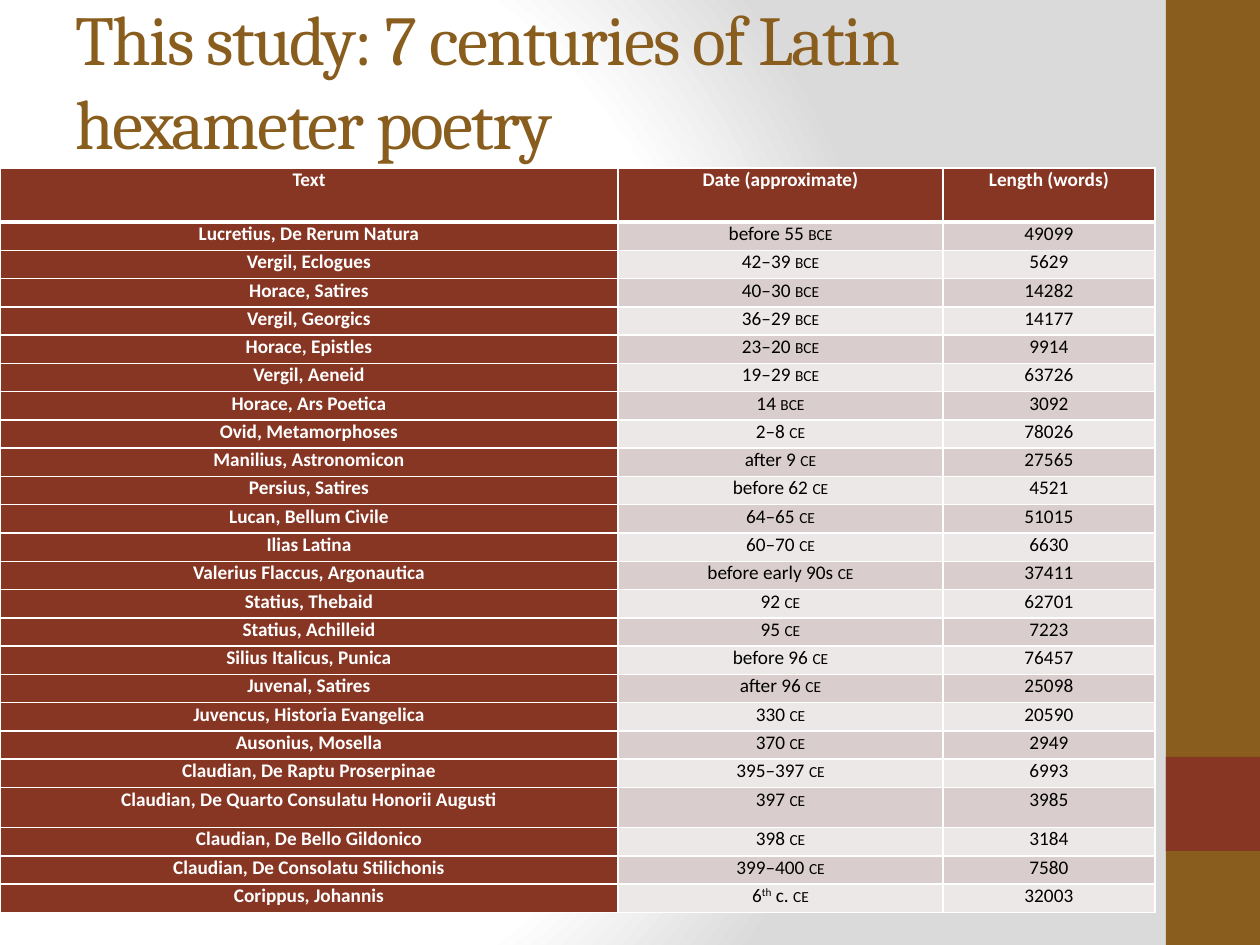
from dataclasses import dataclass

from lxml import etree
from pptx import Presentation
from pptx import util as u
from pptx.dml.color import RGBColor
from pptx.enum import shapes, text
from pptx.oxml import ns


@dataclass(frozen=True)
class Theme:
    """Colours, fonts and type sizes of the deck."""
    gold: str = "895D1D"
    rust: str = "873624"
    white: str = "FFFFFF"
    black: str = "000000"
    grey: str = "DADADA"
    bands: tuple = ("EDE8E8", "D9CECD")
    heading: str = "Cambria"
    body: str = "Calibri"
    title_pt: int = 40
    cell_pt: int = 11


T = Theme()
SCALE = 914400 / 126
HEADER = ("Text", "Date (approximate)", "Length (words)")
POEMS = [
    ("Lucretius, De Rerum Natura", "before 55 bce", "49099"),
    ("Vergil, Eclogues", "42–39 bce", "5629"),
    ("Horace, Satires", "40–30 bce", "14282"),
    ("Vergil, Georgics", "36–29 bce", "14177"),
    ("Horace, Epistles", "23–20 bce", "9914"),
    ("Vergil, Aeneid", "19–29 bce", "63726"),
    ("Horace, Ars Poetica", "14 bce", "3092"),
    ("Ovid, Metamorphoses", "2–8 ce", "78026"),
    ("Manilius, Astronomicon", "after 9 ce", "27565"),
    ("Persius, Satires", "before 62 ce", "4521"),
    ("Lucan, Bellum Civile", "64–65 ce", "51015"),
    ("Ilias Latina", "60–70 ce", "6630"),
    ("Valerius Flaccus, Argonautica", "before early 90s ce", "37411"),
    ("Statius, Thebaid", "92 ce", "62701"),
    ("Statius, Achilleid", "95 ce", "7223"),
    ("Silius Italicus, Punica", "before 96 ce", "76457"),
    ("Juvenal, Satires", "after 96 ce", "25098"),
    ("Juvencus, Historia Evangelica", "330 ce", "20590"),
    ("Ausonius, Mosella", "370 ce", "2949"),
    ("Claudian, De Raptu Proserpinae", "395–397 ce", "6993"),
    ("Claudian, De Quarto Consulatu Honorii Augusti", "397 ce", "3985"),
    ("Claudian, De Bello Gildonico", "398 ce", "3184"),
    ("Claudian, De Consolatu Stilichonis", "399–400 ce", "7580"),
    ("Corippus, Johannis", "6th c. ce", "32003"),
]


def px(n):
    """Turn pixels into EMU."""
    return u.Emu(round(n * SCALE))


def rgb(color):
    """Turn a hex string into a colour."""
    return RGBColor.from_string(color)


def add_run(p, words, font, size, color, bold=False, **attrs):
    """Add one run, with any extra run attributes."""
    r = p.add_run()
    r.text = words
    r.font.name, r.font.size, r.font.bold = font, u.Pt(size), bold
    r.font.color.rgb = rgb(color)
    for name, value in attrs.items():
        r.font._element.set(name, value)


def paint_background(s):
    """Fill the slide with a circular white to grey gradient."""
    fill = s.background.fill
    fill.gradient()
    grad = s.background._cSld.find(".//" + ns.qn("a:gradFill"))
    for child in list(grad):
        grad.remove(child)
    stops = etree.SubElement(grad, ns.qn("a:gsLst"))
    for pos, color in ((0, T.white), (75, T.white), (100, T.grey)):
        gs = etree.SubElement(stops, ns.qn("a:gs"), pos=str(pos * 1000))
        etree.SubElement(gs, ns.qn("a:srgbClr"), val=color)
    circle = etree.SubElement(grad, ns.qn("a:path"), path="circle")
    etree.SubElement(circle, ns.qn("a:fillToRect"),
                     l="20000", t="50000", r="100000", b="50000")


def add_sidebar(s, x, y, w, h):
    """Draw the gold side band with its rust square."""
    for top, height, color in ((y, h, T.gold), (y + h - 2 * w, w, T.rust)):
        sp = s.shapes.add_shape(shapes.MSO_SHAPE.RECTANGLE,
                                px(x), px(top), px(w), px(height))
        sp.shadow.inherit = False
        sp.fill.solid()
        sp.fill.fore_color.rgb = rgb(color)
        sp.line.fill.background()


def add_title(s, x, y, w, h):
    """Place the slide title."""
    tf = s.shapes.add_textbox(px(x), px(y), px(w), px(h)).text_frame
    tf.word_wrap = True
    tf.vertical_anchor = text.MSO_ANCHOR.MIDDLE
    add_run(tf.paragraphs[0], "This study: 7 centuries of Latin hexameter poetry",
            T.heading, T.title_pt, T.gold, spc="-100")


def set_borders(cell, top, bottom):
    """Give a cell white borders of the given top and bottom points."""
    tcPr = cell._tc.get_or_add_tcPr()
    for i, (side, pt) in enumerate((("L", 1), ("R", 1), ("T", top), ("B", bottom))):
        ln = etree.Element(ns.qn("a:ln" + side), w=str(u.Pt(pt)))
        fill = etree.SubElement(ln, ns.qn("a:solidFill"))
        etree.SubElement(fill, ns.qn("a:srgbClr"), val=T.white)
        tcPr.insert(i, ln)


def add_date(p, date):
    """Write a date with its era in small capitals and raised ordinal."""
    when, era = date.rsplit(" ", 1)
    number, ordinal, rest = when.partition("th")
    parts = [(number, {}), (ordinal, {"baseline": "30000"}), (rest, {})]
    parts = [part for part in parts if part[0]]
    parts[-1] = (parts[-1][0] + " ", parts[-1][1])
    for words, attrs in parts + [(era, {"cap": "small"})]:
        add_run(p, words, T.body, T.cell_pt, T.black, **attrs)


def fill_cell(cell, row, col, words):
    """Style one cell by its place in the table and write its words."""
    strong = row == 0 or col == 0
    cell.margin_left = cell.margin_right = px(9)
    cell.margin_top = cell.margin_bottom = 0
    cell.fill.solid()
    cell.fill.fore_color.rgb = rgb(T.rust if strong else T.bands[row % 2])
    set_borders(cell, 3 if row == 1 else 1, 3 if row == 0 else 1)
    p = cell.text_frame.paragraphs[0]
    p.alignment = text.PP_ALIGN.CENTER
    if col == 1 and row:
        add_date(p, words)
    else:
        add_run(p, words, T.body, T.cell_pt, T.white if strong else T.black, strong)


def add_poem_table(s, x, y, w, h):
    """Lay out the table of poems with even rows between the taller ones."""
    rows = [HEADER] + POEMS
    tbl = s.shapes.add_table(len(rows), 3, px(x), px(y), px(w), px(h)).table
    tbl.first_row = tbl.horz_banding = False
    widths = (618, 325, w - 618 - 325)
    for column, width in zip(tbl.columns, widths):
        column.width = px(width)
    tall = {0: 54, 21: 40}
    even = (h - sum(tall.values())) / (len(rows) - len(tall))
    for i, row in enumerate(rows):
        tbl.rows[i].height = px(tall.get(i, even))
        for j, words in enumerate(row):
            fill_cell(tbl.cell(i, j), i, j, words)


def main():
    """Build and save the deck."""
    prs = Presentation()
    prs.slide_width, prs.slide_height = px(1260), px(945)
    s = prs.slides.add_slide(prs.slide_layouts[6])
    paint_background(s)
    add_sidebar(s, 1166, 0, 94, 945)
    add_title(s, 63, 0, 1050, 158)
    add_poem_table(s, 0, 168, 1155, 745)
    prs.save("out.pptx")


if __name__ == "__main__":
    main()
